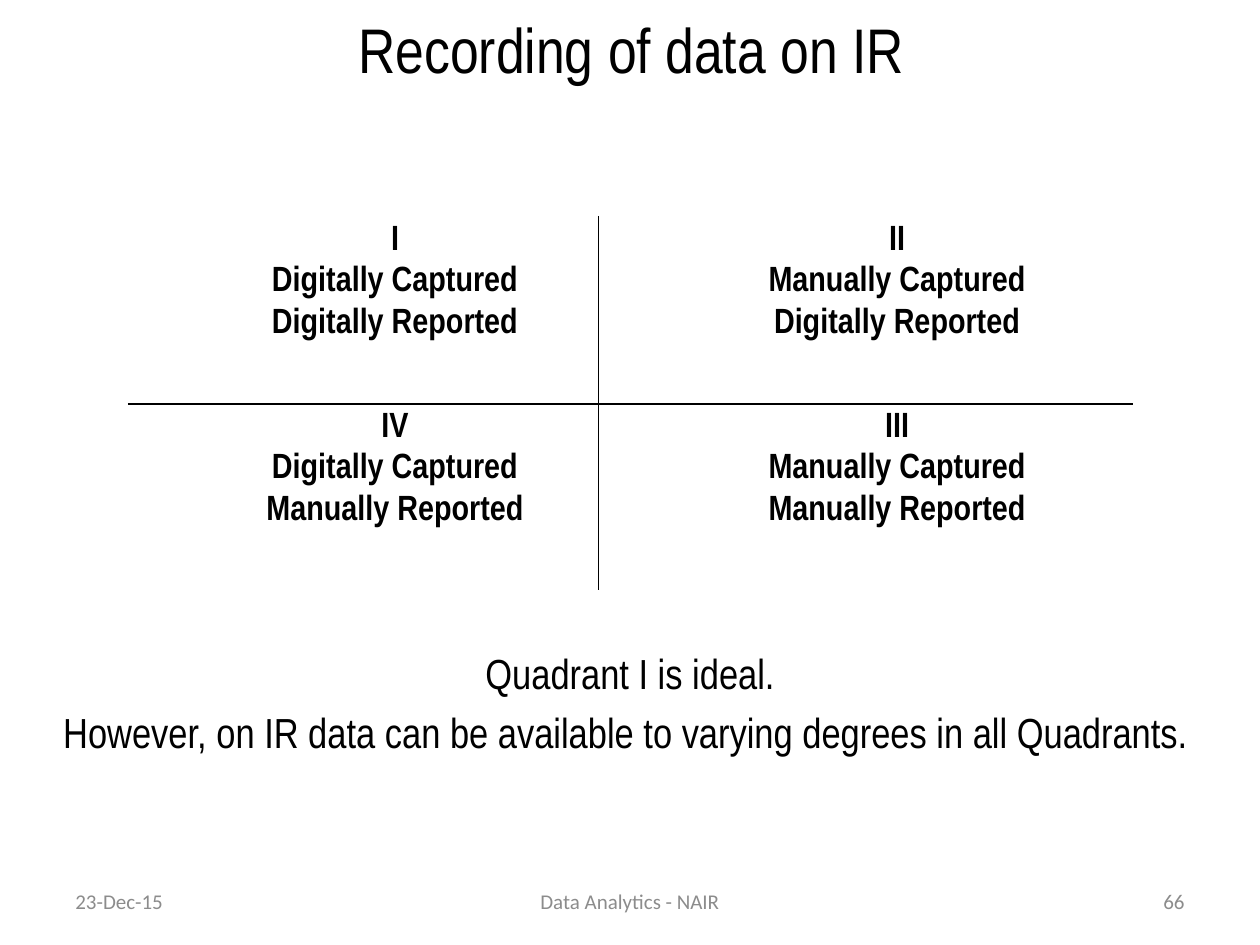
from lxml import etree
from pptx import Presentation
from pptx.dml.color import RGBColor
from pptx.enum.text import MSO_ANCHOR, PP_ALIGN
from pptx.oxml.ns import qn
from pptx.util import Inches, Pt

LEFT, MID, RIGHT = PP_ALIGN.LEFT, PP_ALIGN.CENTER, PP_ALIGN.RIGHT
CENTER, TOP = MSO_ANCHOR.MIDDLE, MSO_ANCHOR.TOP
HEX = {"ink": "000000", "grey": "8C8C8C", "paper": "FFFFFF"}
QUADS = [
    [("I", "Digitally Captured", "Digitally Reported"),
     ("II", "Manually Captured", "Digitally Reported")],
    [("IV", "Digitally Captured", "Manually Reported"),
     ("III", "Manually Captured", "Manually Reported")],
]
NOTES = ("Quadrant I is ideal.",
         "However, on IR data can be available to varying degrees in all Quadrants. ")


def write(frame, lines, size=12, font="Arial Narrow", color="ink", bold=False,
          align=MID, anchor=TOP, indent=None, spacing=None):
    """Fill a text frame with one formatted paragraph per line."""
    frame.word_wrap = True
    frame.vertical_anchor = anchor
    for i, line in enumerate(lines):
        para = frame.paragraphs[0] if i == 0 else frame.add_paragraph()
        para.alignment = align
        para.line_spacing = spacing
        if indent is not None:
            props = para._p.get_or_add_pPr()
            props.set("marL", str(Inches(indent)))
            props.set("indent", "0")
            etree.SubElement(props, qn("a:buNone"))
        run = para.add_run()
        run.text = line
        run.font.size, run.font.name, run.font.bold = Pt(size), font, bold
        run.font.color.rgb = RGBColor.from_string(HEX[color])


def place(shape, box):
    """Move a shape to a box given in inches."""
    shape.left, shape.top, shape.width, shape.height = map(Inches, box)


def edge(cell, side):
    """Draw a thin line along one side of a cell."""
    line = etree.SubElement(cell._tc.get_or_add_tcPr(), qn("a:" + side), w=str(Pt(1)))
    fill = etree.SubElement(line, qn("a:solidFill"))
    etree.SubElement(fill, qn("a:srgbClr"), val=HEX["ink"])


def add_title(slide, box):
    """Place the heading."""
    place(slide.shapes.title, box)
    write(slide.shapes.title.text_frame, ["Recording of data on IR"], size=36, anchor=CENTER)


def add_grid(slide, box, split):
    """Place the four quadrants, parted by a cross of lines."""
    left, top, width, height = box
    table = slide.shapes.add_table(2, 2, *map(Inches, box)).table
    table.first_row = table.horz_banding = False
    for col, size in zip(table.columns, (split, width - split)):
        col.width = Inches(size)
    for r, row in enumerate(QUADS):
        for c, lines in enumerate(row):
            cell = table.cell(r, c)
            cell.margin_left = cell.margin_right = Inches(0.07)
            cell.margin_top = cell.margin_bottom = 0
            edge(cell, ("lnR", "lnL")[c])
            edge(cell, ("lnB", "lnT")[r])
            cell.fill.solid()
            cell.fill.fore_color.rgb = RGBColor.from_string(HEX["paper"])
            write(cell.text_frame, lines, size=20, bold=True, indent=0.5, spacing=1.25)


def add_notes(slide, box):
    """Place the closing remarks."""
    body = slide.placeholders[1]
    place(body, box)
    write(body.text_frame, NOTES, size=24, indent=0)


def add_foot(slide, box):
    """Place date, footer and page number across the box."""
    left, top, width, height = box
    side, mid = 2.33, 3.17
    parts = [
        ("23-Dec-15", left, side, LEFT),
        ("Data Analytics - NAIR", left + (width - mid) / 2, mid, MID),
        ("66", left + width - side, side, RIGHT),
    ]
    for text, x, span, align in parts:
        label = slide.shapes.add_textbox(*map(Inches, (x, top, span, height)))
        write(label.text_frame, [text], font="Calibri", color="grey",
              align=align, anchor=CENTER)


def main():
    """Build and save the slide."""
    deck = Presentation()
    deck.slide_width, deck.slide_height = Inches(10), Inches(7.5)
    slide = deck.slides.add_slide(deck.slide_layouts[1])
    add_grid(slide, (1.02, 1.72, 7.97, 2.97), 3.73)
    add_notes(slide, (0, 5.09, 10, 1.66))
    add_title(slide, (0.83, 0.03, 8.36, 0.71))
    add_foot(slide, (0.5, 6.95, 9, 0.4))
    deck.save("out.pptx")


if __name__ == "__main__":
    main()
